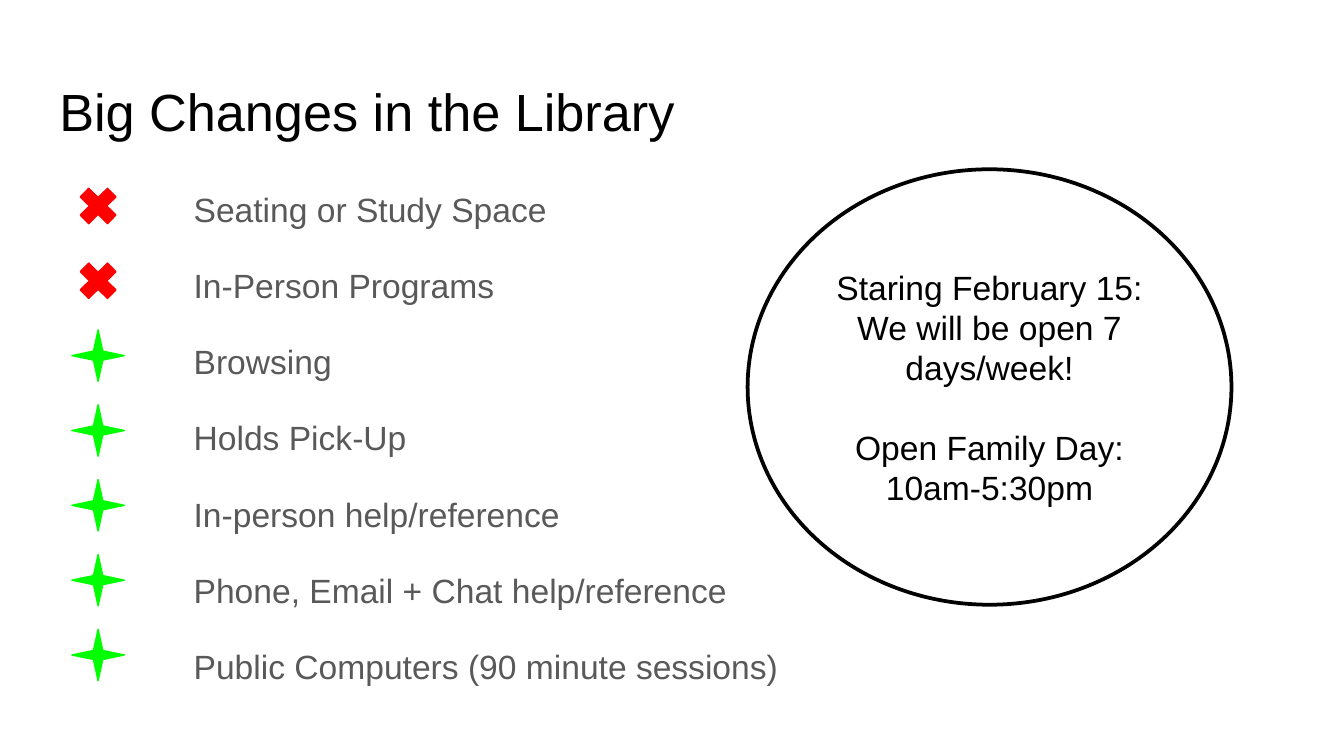
from pptx import Presentation
from pptx.dml.color import RGBColor
from pptx.enum.shapes import MSO_SHAPE
from pptx.enum.text import MSO_ANCHOR, PP_ALIGN
from pptx.util import Inches, Pt

BLACK = RGBColor(0x00, 0x00, 0x00)
WHITE = RGBColor(0xFF, 0xFF, 0xFF)
GRAY = RGBColor(0x59, 0x59, 0x59)
RED = RGBColor(0xFF, 0x00, 0x00)
GREEN = RGBColor(0x00, 0xFF, 0x00)

CLOSED = (MSO_SHAPE.MATH_MULTIPLY, 0.235, RED)
OPEN = (MSO_SHAPE.STAR_4_POINT, 0.125, GREEN)
SERVICES = [
    ("Seating or Study Space", CLOSED),
    ("In-Person Programs", CLOSED),
    ("Browsing", OPEN),
    ("Holds Pick-Up", OPEN),
    ("In-person help/reference", OPEN),
    ("Phone, Email + Chat help/reference", OPEN),
    ("Public Computers (90 minute sessions)", OPEN),
]
HOURS = [
    "Staring February 15:",
    "We will be open 7 days/week!",
    "Open Family Day:",
    "10am-5:30pm",
]


def write_text(frame, lines, size=18, color=BLACK, align=PP_ALIGN.LEFT,
               anchor=MSO_ANCHOR.TOP, spacing=None, gaps=None, indent=0):
    """Fill a text frame; gaps maps a line's index to the points above it."""
    frame.word_wrap = True
    frame.vertical_anchor = anchor
    frame.margin_left = Inches(0.1 + indent)
    frame.margin_right = frame.margin_top = frame.margin_bottom = Inches(0.1)
    for index, line in enumerate(lines):
        paragraph = frame.add_paragraph() if index else frame.paragraphs[0]
        paragraph.alignment = align
        paragraph.space_before = Pt((gaps or {}).get(index, 0))
        if spacing:
            paragraph.line_spacing = spacing
        run = paragraph.add_run()
        run.text = line
        run.font.name = "Arial"
        run.font.size = Pt(size)
        run.font.color.rgb = color


class LibrarySlide:
    """Places elements by percentages of the slide's width and height."""

    def __init__(self, presentation):
        self.width = presentation.slide_width
        self.height = presentation.slide_height
        self.slide = presentation.slides.add_slide(presentation.slide_layouts[5])

    def box(self, left, top, width, height):
        return (round(left * self.width / 100), round(top * self.height / 100),
                round(width * self.width / 100), round(height * self.height / 100))

    def title(self, text, *place):
        shape = self.slide.shapes.title
        shape.left, shape.top, shape.width, shape.height = self.box(*place)
        write_text(shape.text_frame, [text], size=28)

    def text_list(self, lines, *place):
        shape = self.slide.shapes.add_textbox(*self.box(*place))
        gaps = {index: 16 for index in range(1, len(lines))}
        write_text(shape.text_frame, lines, color=GRAY, spacing=1.15,
                   gaps=gaps, indent=1)

    def shape(self, kind, *place, fill, line, line_width=0.75):
        shape = self.slide.shapes.add_shape(kind, *self.box(*place))
        shape.shadow.inherit = False
        shape.fill.solid()
        shape.fill.fore_color.rgb = fill
        shape.line.color.rgb = line
        shape.line.width = Pt(line_width)
        return shape

    def marker(self, row, kind, adjustment, color):
        shape = self.shape(kind, 5.35, 23.85 + row * 9.9, 3.9, 6.8,
                           fill=color, line=color)
        shape.adjustments[0] = adjustment

    def callout(self, lines, *place):
        shape = self.shape(MSO_SHAPE.OVAL, *place, fill=WHITE, line=BLACK,
                           line_width=2)
        write_text(shape.text_frame, lines, align=PP_ALIGN.CENTER,
                   anchor=MSO_ANCHOR.MIDDLE, gaps={2: 21})


def main():
    presentation = Presentation()
    presentation.slide_width = Inches(10)
    presentation.slide_height = presentation.slide_width * 9 // 16
    library = LibrarySlide(presentation)
    library.title("Big Changes in the Library", 3.41, 8.65, 93.2, 11.2)
    library.text_list([name for name, _ in SERVICES], 3.41, 22.4, 93.2, 66.4)
    for row, (_, status) in enumerate(SERVICES):
        library.marker(row, *status)
    library.callout(HOURS, 55.63, 22.4, 36, 57.6)
    presentation.save("out.pptx")


if __name__ == "__main__":
    main()
